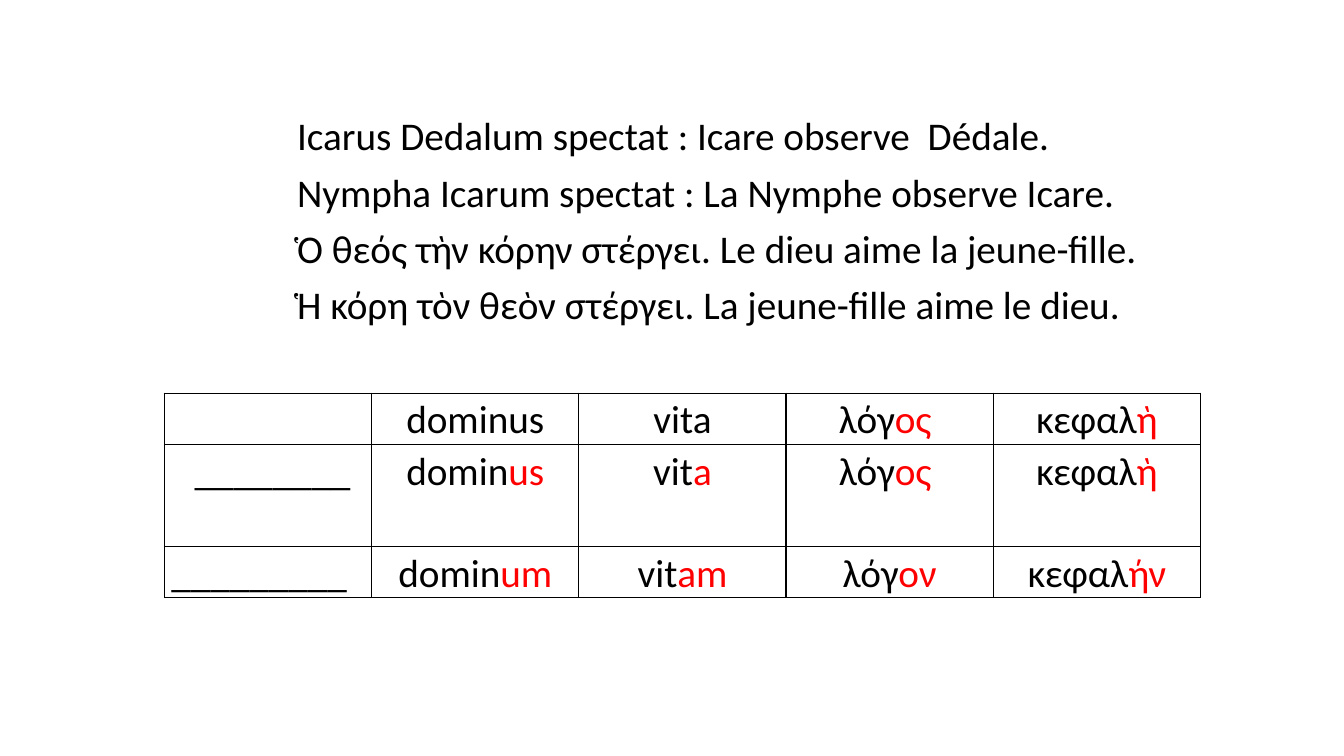
"""Build a slide of Latin and Greek sentences above a declension table."""
import pptx
import pptx.util
import pptx.dml.color
import pptx.enum.text
import pptx.oxml
import pptx.oxml.ns

Pt = pptx.util.Pt
ALIGN = pptx.enum.text.PP_ALIGN

LINES = [
    "Icarus Dedalum spectat : Icare observe  Dédale.",
    "Nympha Icarum spectat : La Nymphe observe Icare.",
    "Ὁ θεός τὴν κόρην στέργει. Le dieu aime la jeune-fille.",
    "Ἡ κόρη τὸν θεὸν στέργει. La jeune-fille aime le dieu.",
]
ROWS = [
    [("", ""), ("dominus", ""), ("vita", ""), ("λόγ", "ος "), ("κεφαλ", "ὴ")],
    [(" ________", ""), ("domin", "us"), ("vit", "a"), ("λόγ", "ος "), ("κεφαλ", "ὴ")],
    [("_________", ""), ("domin", "um"), ("vit", "am"), ("λόγ", "ον"), ("κεφαλ", "ήν")],
]
HUES = {"stem": "000000", "end": "FF0000", "rule": "000000"}
FONT = {"name": "Calibri", "size": Pt(28), "bold": False}
BODY = {"left": Pt(66), "top": Pt(80), "width": Pt(828), "height": Pt(401)}
BODY_PAR = {"line_spacing": 0.9, "space_before": Pt(10), "space_after": Pt(0)}
CELL_PAR = {"line_spacing": 1.07, "alignment": ALIGN.CENTER}
INSETS = {"margin_left": Pt(5), "margin_right": Pt(5), "margin_top": 0, "margin_bottom": 0}
PLAIN = {"first_row": False, "horz_banding": False}
INDENT = Pt(139)
LEFT, TOP, COL = 117.5, 280.8, 148
HEIGHTS = [36.5, 73, 36.5]


def put(item, vals):
    for key, val in vals.items():
        setattr(item, key, val)


def add_run(par, text, hue):
    run = par.add_run()
    run.text = text
    put(run.font, FONT)
    run.font.color.rgb = pptx.dml.color.RGBColor.from_string(HUES[hue])


def add_rules(cell):
    props = cell._tc.get_or_add_tcPr()
    for spot, side in enumerate("LRTB"):
        props.insert(spot, pptx.oxml.parse_xml(
            f'<a:ln{side} {pptx.oxml.ns.nsdecls("a")} w="{Pt(1)}"><a:solidFill>'
            f'<a:srgbClr val="{HUES["rule"]}"/></a:solidFill></a:ln{side}>'))


def add_lines(slide):
    body = slide.placeholders[1]
    put(body, BODY)
    frame = body.text_frame
    frame.auto_size = pptx.enum.text.MSO_AUTO_SIZE.NONE
    for num, line in enumerate(LINES):
        par = frame.add_paragraph() if num else frame.paragraphs[0]
        put(par, BODY_PAR)
        props = par._p.get_or_add_pPr()
        props.set("marL", str(INDENT))
        props.set("indent", "0")
        props.append(pptx.oxml.parse_xml(f'<a:buNone {pptx.oxml.ns.nsdecls("a")}/>'))
        add_run(par, line, "stem")


def add_grid(slide):
    count = len(ROWS[0])
    grid = slide.shapes.add_table(len(ROWS), count, Pt(LEFT), Pt(TOP),
                                  Pt(COL * count), Pt(sum(HEIGHTS))).table
    put(grid, PLAIN)
    for row, high, words in zip(grid.rows, HEIGHTS, ROWS):
        row.height = Pt(high)
        for cell, (stem, end) in zip(row.cells, words):
            put(cell, INSETS)
            cell.fill.background()
            add_rules(cell)
            par = cell.text_frame.paragraphs[0]
            put(par, CELL_PAR)
            for text, hue in ((stem, "stem"), (end, "end")):
                if text:
                    add_run(par, text, hue)
    grid.cell(2, 0).text_frame.paragraphs[0].alignment = ALIGN.LEFT


def main():
    deck = pptx.Presentation()
    put(deck, {"slide_width": Pt(960), "slide_height": Pt(540)})
    slide = deck.slides.add_slide(deck.slide_layouts[1])
    title = slide.shapes.title.element
    title.getparent().remove(title)
    add_lines(slide)
    add_grid(slide)
    deck.save("out.pptx")


if __name__ == "__main__":
    main()
